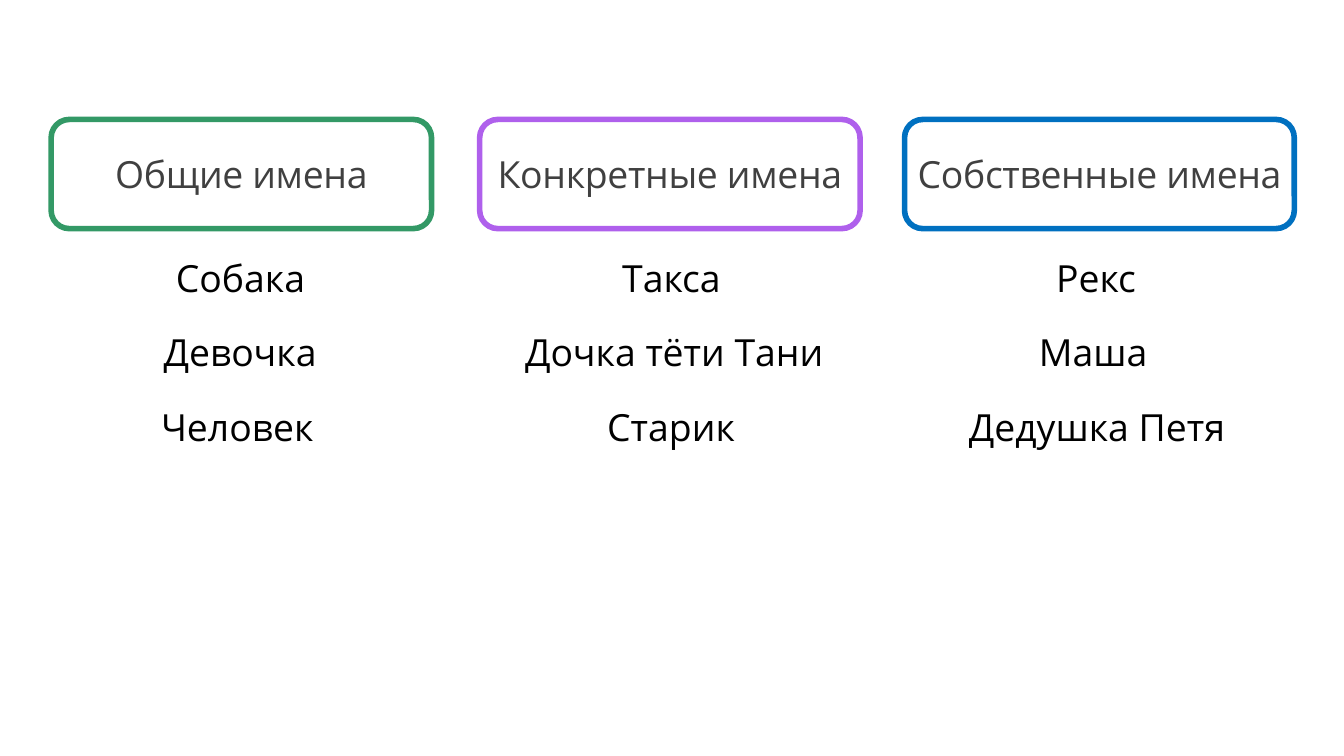
from pptx import Presentation
from pptx.dml.color import RGBColor
from pptx.enum.shapes import MSO_SHAPE
from pptx.enum.text import MSO_ANCHOR, MSO_AUTO_SIZE, PP_ALIGN
from pptx.util import Pt

COLORS = {
    "general": "339966",
    "specific": "AF60EC",
    "proper": "0070C0",
    "heading": "404040",
    "word": "000000",
}
FONT = "Open Sans"
FONT_SIZE = 20

HEADING_TOP, HEADING_HEIGHT = 64, 58.5
FIRST_WORD_TOP, WORD_STEP, WORD_HEIGHT = 133, 40, 31.5

# Heading: text, colour, left, width, side inset; words: text, left, width, wrap
COLUMNS = [
    (("Общие имена", "general", 27.4, 203.8, 0),
     [("Собака", 87.1, 84.2, False),
      ("Девочка", 80.6, 97.2, False),
      ("Человек", 79.2, 98.6, True)]),
    (("Конкретные имена", "specific", 257, 203.8, 2.9),
     [("Такса", 326.2, 67.7, False),
      ("Дочка тёти Тани", 274.3, 175.7, False),
      ("Старик", 318.2, 83.5, False)]),
    (("Собственные имена", "proper", 484.6, 208.8, 2.9),
     [("Рекс", 558.7, 57.6, False),
      ("Маша", 549.4, 73.4, False),
      ("Дедушка Петя", 511.9, 159.1, True)]),
]


def add_run(paragraph, text, color):
    run = paragraph.add_run()
    run.text = text
    run.font.name = FONT
    run.font.size = Pt(FONT_SIZE)
    run.font.color.rgb = RGBColor.from_string(COLORS[color])
    return run


def add_heading(slide, text, color, left, width, inset):
    shape = slide.shapes.add_shape(
        MSO_SHAPE.ROUNDED_RECTANGLE,
        Pt(left), Pt(HEADING_TOP), Pt(width), Pt(HEADING_HEIGHT))
    shape.shadow.inherit = False
    shape.fill.background()
    shape.line.color.rgb = RGBColor.from_string(COLORS[color])
    shape.line.width = Pt(3)

    frame = shape.text_frame
    frame.word_wrap = True
    frame.vertical_anchor = MSO_ANCHOR.MIDDLE
    frame.margin_left = frame.margin_right = Pt(inset)
    frame.margin_top = frame.margin_bottom = Pt(14.4)
    paragraph = frame.paragraphs[0]
    paragraph.alignment = PP_ALIGN.CENTER
    run = add_run(paragraph, text, "heading")
    # Letter spacing in hundredths of a point
    run.font._element.set("spc", "-20")


def add_word(slide, row, text, left, width, wrap):
    top = FIRST_WORD_TOP + row * WORD_STEP
    box = slide.shapes.add_textbox(Pt(left), Pt(top), Pt(width), Pt(WORD_HEIGHT))
    frame = box.text_frame
    frame.word_wrap = wrap
    frame.auto_size = MSO_AUTO_SIZE.SHAPE_TO_FIT_TEXT
    add_run(frame.paragraphs[0], text, "word")


def main():
    presentation = Presentation()
    presentation.slide_width = Pt(720)
    presentation.slide_height = Pt(405)
    slide = presentation.slides.add_slide(presentation.slide_layouts[6])

    # Three columns: a framed heading above its words
    for heading, words in COLUMNS:
        add_heading(slide, *heading)
        for row, word in enumerate(words):
            add_word(slide, row, *word)

    presentation.save("out.pptx")


if __name__ == "__main__":
    main()
